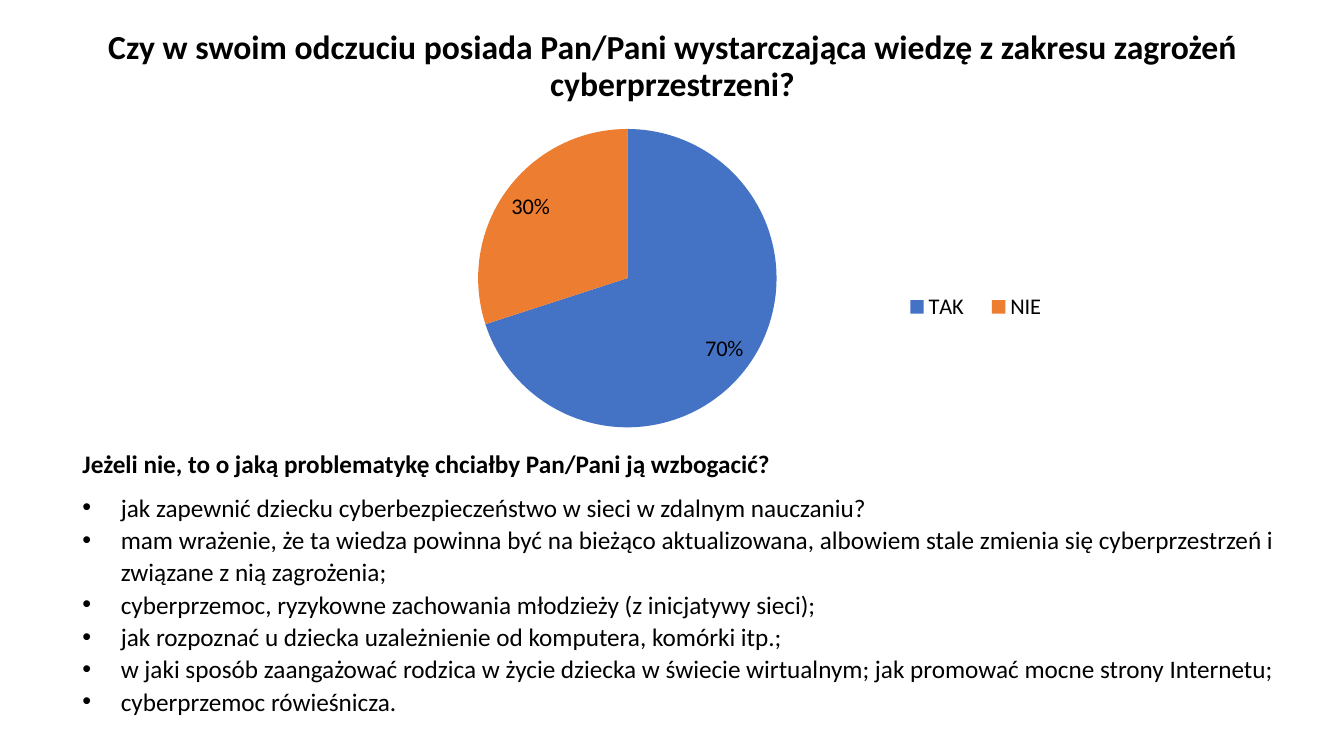
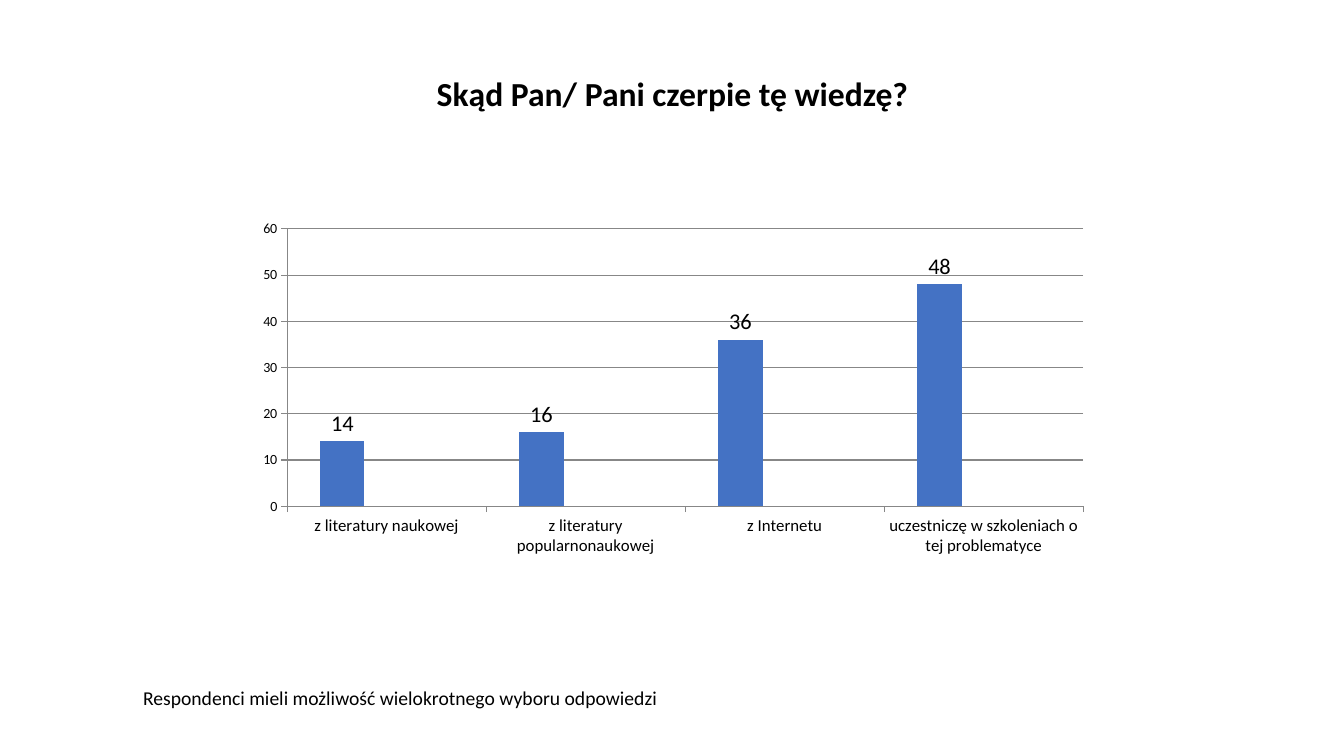
"""Build two survey slides about knowledge of cyberspace threats."""
from dataclasses import dataclass
from typing import NamedTuple

import lxml.etree
import pptx
import pptx.chart.data
import pptx.dml.color
import pptx.enum.chart
import pptx.enum.text
import pptx.oxml.ns
import pptx.util

Inches = pptx.util.Inches
Pt = pptx.util.Pt
qn = pptx.oxml.ns.qn
RGB = pptx.dml.color.RGBColor


@dataclass(frozen=True)
class Theme:
    font: str = "Calibri"
    ink: RGB = RGB(0x00, 0x00, 0x00)
    grid: RGB = RGB(0x87, 0x87, 0x87)
    accents: tuple[RGB, ...] = (
        RGB(0x44, 0x72, 0xC4),
        RGB(0xED, 0x7D, 0x31),
        RGB(0xA5, 0xA5, 0xA5),
    )
    title: float = 24
    body: float = 18
    note: float = 14
    chart_label: float = 16
    category: float = 12
    chart: float = 10


class Box(NamedTuple):
    left: float
    top: float
    width: float
    height: float

    def emu(self) -> tuple[int, ...]:
        return tuple(Inches(length) for length in self)


class Fractions(NamedTuple):
    x: float
    y: float
    w: float
    h: float


@dataclass(frozen=True)
class Line:
    text: str
    size: float
    bold: bool = False
    bullet: bool = False
    centred: bool = False
    spacing: float = 1.0
    after: float = 0


THEME = Theme()
BULLET_INDENT = Inches(0.38)
BODY_SPACING = 1.07
BODY_GAP = 8
TOPICS = (
    "jak zapewnić dziecku cyberbezpieczeństwo w sieci w zdalnym nauczaniu?",
    "mam wrażenie, że ta wiedza powinna być na bieżąco aktualizowana, albowiem stale "
    "zmienia się cyberprzestrzeń i związane z nią zagrożenia;",
    "cyberprzemoc, ryzykowne zachowania młodzieży (z inicjatywy sieci);",
    "jak rozpoznać u dziecka uzależnienie od komputera, komórki itp.;",
    "w jaki sposób zaangażować rodzica w życie dziecka w świecie wirtualnym; "
    "jak promować mocne strony Internetu;",
    "cyberprzemoc rówieśnicza.",
)
SOURCES = {
    "z literatury naukowej": 14,
    "z literatury popularnonaukowej": 16,
    "z Internetu": 36,
    "uczestniczę w szkoleniach o tej problematyce": 48,
}


def style_font(font, size: float, bold: bool = False) -> None:
    font.name = THEME.font
    font.size = Pt(size)
    font.bold = bold
    font.color.rgb = THEME.ink


def add_bullet(paragraph) -> None:
    properties = paragraph._p.get_or_add_pPr()
    properties.set("marL", str(BULLET_INDENT))
    properties.set("indent", str(-BULLET_INDENT))
    lxml.etree.SubElement(properties, qn("a:buFont")).set("typeface", "Arial")
    lxml.etree.SubElement(properties, qn("a:buChar")).set("char", "•")


def add_lines(slide, box: Box, lines: list[Line], middle: bool = False, wrap: bool = True) -> None:
    frame = slide.shapes.add_textbox(*box.emu()).text_frame
    frame.word_wrap = wrap
    if middle:
        frame.vertical_anchor = pptx.enum.text.MSO_ANCHOR.MIDDLE
    frame.text = "\n".join(line.text for line in lines)
    for paragraph, line in zip(frame.paragraphs, lines):
        paragraph.line_spacing = line.spacing
        paragraph.space_after = Pt(line.after)
        if line.centred:
            paragraph.alignment = pptx.enum.text.PP_ALIGN.CENTER
        if line.bullet:
            add_bullet(paragraph)
        for run in paragraph.runs:
            style_font(run.font, line.size, line.bold)


def add_title(slide, top: float, height: float, text: str) -> None:
    heading = Line(text, THEME.title, bold=True, centred=True, spacing=0.9)
    add_lines(slide, Box(0.92, top, 11.5, height), [heading], middle=True)


def set_layout(parent, index: int, area: Fractions, inner: bool = False) -> None:
    for old in parent.findall(qn("c:layout")):
        parent.remove(old)
    layout = lxml.etree.Element(qn("c:layout"))
    manual = lxml.etree.SubElement(layout, qn("c:manualLayout"))
    settings = {"layoutTarget": "inner"} if inner else {}
    settings |= {"xMode": "edge", "yMode": "edge"}
    settings |= {name: str(share) for name, share in area._asdict().items()}
    for name, setting in settings.items():
        lxml.etree.SubElement(manual, qn(f"c:{name}")).set("val", setting)
    parent.insert(index, layout)


def add_survey_chart(slide, kind, box: Box, data, plot_area: Fractions):
    chart = slide.shapes.add_chart(kind, *box.emu(), data).chart
    chart.has_title = False
    chart.has_legend = False
    style_font(chart.font, THEME.chart)
    set_layout(chart.element.find(f".//{qn('c:plotArea')}"), 0, plot_area, inner=True)
    return chart


def show_values(labels, position, number_format: str) -> None:
    labels.show_value = True
    labels.position = position
    labels.number_format = number_format
    labels.number_format_is_linked = False
    style_font(labels.font, THEME.chart_label)


def paint(part, colour: RGB) -> None:
    part.format.fill.solid()
    part.format.fill.fore_color.rgb = colour


def draw_line(line) -> None:
    line.color.rgb = THEME.grid
    line.width = Pt(0.75)


def build_knowledge_slide(slide) -> None:
    add_title(slide, 0.19, 0.95, "Czy w swoim odczuciu posiada Pan/Pani wystarczająca wiedzę "
              "z zakresu zagrożeń cyberprzestrzeni?")
    answers = pptx.chart.data.CategoryChartData(number_format="0%")
    answers.categories = ["TAK", "NIE"]
    answers.add_series("Series 1", [0.7, 0.3])
    chart = add_survey_chart(slide, pptx.enum.chart.XL_CHART_TYPE.PIE,
                             Box(1.57, 1.15, 10.07, 3.24), answers,
                             Fractions(0.315, 0.04, 0.294, 0.914))
    pie = chart.plots[0]
    pie.vary_by_categories = True
    for index in range(len(pie.categories)):
        paint(pie.series[0].points[index], THEME.accents[index])
    show_values(pie.series[0].data_labels,
                pptx.enum.chart.XL_LABEL_POSITION.INSIDE_END, "0%")
    chart.has_legend = True
    chart.legend.position = pptx.enum.chart.XL_LEGEND_POSITION.RIGHT
    chart.legend.include_in_layout = False
    style_font(chart.legend.font, THEME.chart_label)
    set_layout(chart.element.find(f".//{qn('c:legend')}"), 1, Fractions(0.72, 0.53, 0.17, 0.11))

    question = Line("Jeżeli nie, to o jaką problematykę chciałby Pan/Pani ją wzbogacić?",
                    THEME.body, bold=True, spacing=BODY_SPACING, after=BODY_GAP)
    topics = [Line(topic, THEME.body, bullet=True, spacing=BODY_SPACING) for topic in TOPICS]
    add_lines(slide, Box(0.72, 4.38, 12.43, 2.9), [question, *topics])


def build_sources_slide(slide) -> None:
    add_title(slide, 0.4, 1.09, "Skąd Pan/ Pani czerpie tę wiedzę?")
    note = Line("Respondenci mieli możliwość wielokrotnego wyboru odpowiedzi", THEME.note)
    add_lines(slide, Box(1.32, 6.76, 5.35, 0.34), [note], wrap=False)

    replies = pptx.chart.data.CategoryChartData()
    replies.categories = list(SOURCES)
    replies.add_series("Series 1", list(SOURCES.values()))
    for name in ("Series 2", "Series 3"):
        replies.add_series(name, [None] * len(SOURCES))
    chart = add_survey_chart(slide, pptx.enum.chart.XL_CHART_TYPE.COLUMN_CLUSTERED,
                             Box(2.33, 2, 8.63, 3.76), replies,
                             Fractions(0.06, 0.072, 0.915, 0.732))
    columns = chart.plots[0]
    columns.vary_by_categories = False
    columns.gap_width = 150
    columns.overlap = 0
    for series, colour in zip(columns.series, THEME.accents):
        paint(series, colour)
    show_values(columns.series[0].data_labels,
                pptx.enum.chart.XL_LABEL_POSITION.OUTSIDE_END, "General")
    for axis, size in ((chart.category_axis, THEME.category), (chart.value_axis, THEME.chart)):
        axis.major_tick_mark = pptx.enum.chart.XL_TICK_MARK.OUTSIDE
        axis.minor_tick_mark = pptx.enum.chart.XL_TICK_MARK.NONE
        style_font(axis.tick_labels.font, size)
        draw_line(axis.format.line)
    chart.value_axis.minimum_scale = 0
    chart.value_axis.maximum_scale = 60
    chart.value_axis.major_unit = 10
    chart.value_axis.has_major_gridlines = True
    draw_line(chart.value_axis.major_gridlines.format.line)


def main() -> None:
    deck = pptx.Presentation()
    deck.slide_width = Inches(13.33)
    deck.slide_height = Inches(7.5)
    for build in (build_knowledge_slide, build_sources_slide):
        build(deck.slides.add_slide(deck.slide_layouts[6]))
    deck.save("out.pptx")


if __name__ == "__main__":
    main()
